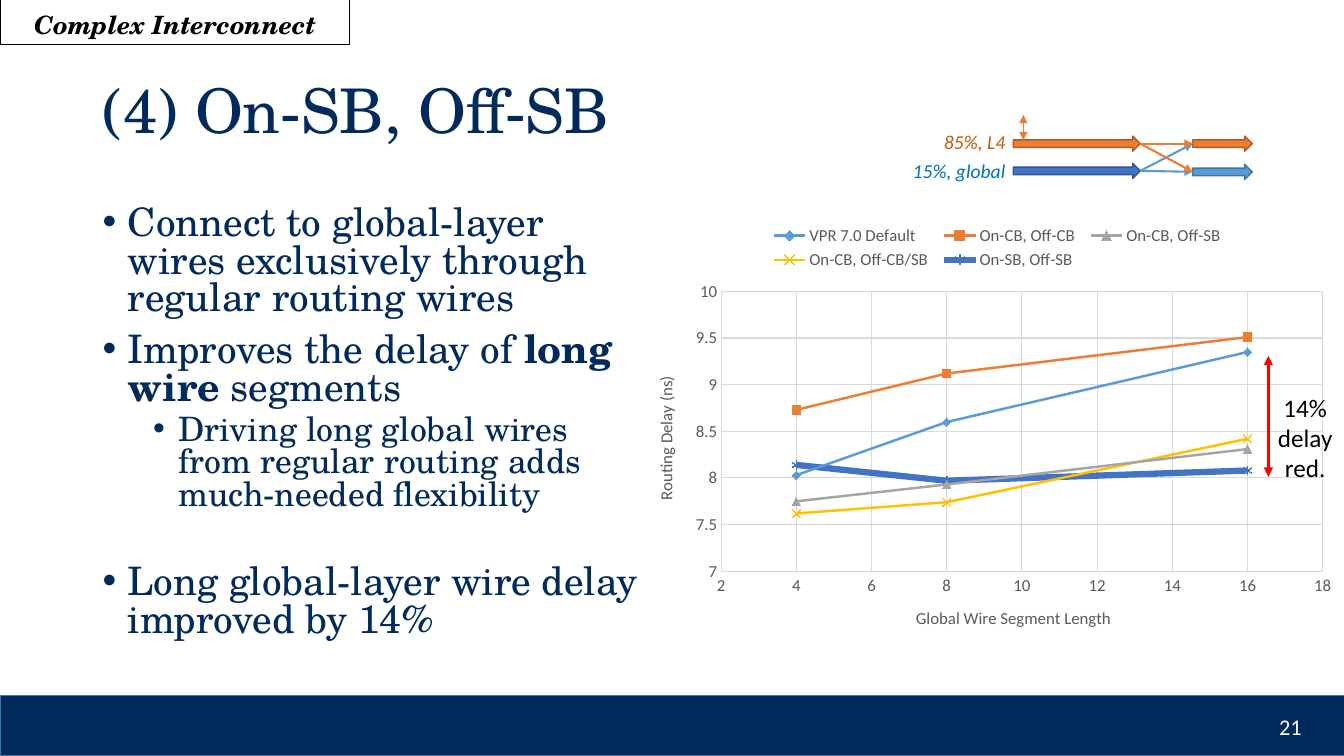
from dataclasses import dataclass

from lxml import etree
from pptx import Presentation
from pptx.chart.data import XyChartData
from pptx.dml.color import RGBColor
from pptx.enum.chart import XL_CHART_TYPE as ChartType, XL_LEGEND_POSITION as LegendPos
from pptx.enum.chart import XL_MARKER_STYLE as Marker, XL_TICK_MARK as TickMark
from pptx.enum.shapes import MSO_CONNECTOR as Connector, MSO_SHAPE as Shape
from pptx.enum.text import MSO_ANCHOR as Anchor, PP_ALIGN as Align
from pptx.oxml.ns import qn
from pptx.util import Inches, Pt

COLORS = {
    "navy": "002A5C", "white": "FFFFFF", "black": "000000", "red": "FF0000",
    "orange": "ED7D31", "orange_edge": "AF5C24", "orange_text": "C55A11",
    "blue": "4472C4", "blue_edge": "325491", "blue_text": "0070C0",
    "sky": "5B9BD5", "sky_edge": "43739E",
    "gray": "A5A5A5", "gold": "FFC000", "grid": "D9D9D9", "axis_text": "595959",
}
SERIF, SANS = "TeX Gyre Schola", "Calibri"
TOP, LEFT, BOTTOM, RIGHT = range(4)


@dataclass
class Label:
    lines: list
    box: tuple
    size: float
    color: str
    font: str = SANS
    align: Align = Align.LEFT
    anchor: Anchor = Anchor.TOP
    bold: bool = False
    italic: bool = False
    spacing: float = 1.0


@dataclass
class Bullet:
    runs: list  # (text, bold)
    size: float
    indent: float
    space_before: float


@dataclass
class Wire:
    box: tuple
    fill: str
    edge: str


@dataclass
class Curve:
    name: str
    delays: tuple
    color: str
    marker: Marker
    width: float = 1.75
    filled: bool = True


def rgb(name: str) -> RGBColor:
    return RGBColor.from_string(COLORS[name])


def style_font(font, color: str, **values) -> None:
    for attribute, value in values.items():
        setattr(font, attribute, value)
    font.color.rgb = rgb(color)


def style_line(line, color: str, width: float) -> None:
    line.color.rgb = rgb(color)
    line.width = Pt(width)


def add_box(slide, kind: Shape, box: tuple, fill: str | None, edge: str):
    shape = slide.shapes.add_shape(kind, *map(Inches, box))
    shape.shadow.inherit = False
    if fill:
        shape.fill.solid()
        shape.fill.fore_color.rgb = rgb(fill)
    else:
        shape.fill.background()
    style_line(shape.line, edge, 1)
    return shape


def add_label(slide, label: Label) -> None:
    frame = slide.shapes.add_textbox(*map(Inches, label.box)).text_frame
    frame.word_wrap = True
    frame.vertical_anchor = label.anchor
    for i, line in enumerate(label.lines):
        paragraph = frame.paragraphs[0] if i == 0 else frame.add_paragraph()
        paragraph.alignment = label.align
        paragraph.line_spacing = label.spacing
        run = paragraph.add_run()
        run.text = line
        style_font(run.font, label.color, size=Pt(label.size), name=label.font,
                   bold=label.bold, italic=label.italic)


def add_bullets(slide, bullets: list, box: tuple) -> None:
    frame = slide.shapes.add_textbox(*map(Inches, box)).text_frame
    frame.word_wrap = True
    for i, bullet in enumerate(bullets):
        paragraph = frame.paragraphs[0] if i == 0 else frame.add_paragraph()
        paragraph.line_spacing = 0.8
        paragraph.space_before = Pt(bullet.space_before)
        props = paragraph._p.get_or_add_pPr()
        props.set("marL", str(Inches(bullet.indent)))
        props.set("indent", str(Inches(-0.25)))
        etree.SubElement(props, qn("a:buFont")).set("typeface", "Arial")
        etree.SubElement(props, qn("a:buChar")).set("char", "•")
        for text, bold in bullet.runs:
            run = paragraph.add_run()
            run.text = text
            style_font(run.font, "navy", size=Pt(bullet.size), name=SERIF, bold=bold)


def add_arrow(slide, start: tuple, end: tuple, color: str, width: float,
              both_ends: bool = False):
    arrow = slide.shapes.add_connector(Connector.STRAIGHT, *map(Inches, start + end))
    style_line(arrow.line, color, width)
    line = arrow.line._get_or_add_ln()
    for tag in ["a:headEnd"] * both_ends + ["a:tailEnd"]:
        etree.SubElement(line, qn(tag)).set("type", "triangle")
    etree.SubElement(arrow._element.spPr, qn("a:effectLst"))
    return arrow


def make_layout(inner: bool, **place: float):
    layout = etree.Element(qn("c:layout"))
    manual = etree.SubElement(layout, qn("c:manualLayout"))
    values = {"layoutTarget": "inner"} if inner else {}
    values |= {"xMode": "edge", "yMode": "edge"} | place
    for tag, value in values.items():
        etree.SubElement(manual, qn(f"c:{tag}")).set("val", str(value))
    return layout


def style_axis(axis, title: str, low: float, high: float, step: float) -> None:
    values = {"minimum_scale": low, "maximum_scale": high, "major_unit": step,
              "major_tick_mark": TickMark.NONE, "minor_tick_mark": TickMark.NONE,
              "has_major_gridlines": True}
    for attribute, value in values.items():
        setattr(axis, attribute, value)
    style_line(axis.format.line, "grid", 0.75)
    style_line(axis.major_gridlines.format.line, "grid", 0.75)
    axis.tick_labels.number_format = "General"
    axis.tick_labels.number_format_is_linked = False
    axis.axis_title.text_frame.text = title
    title_font = axis.axis_title.text_frame.paragraphs[0].runs[0].font
    for font in (axis.tick_labels.font, title_font):
        style_font(font, "axis_text", size=Pt(12), name=SANS, bold=False)


def add_delay_chart(slide, curves: list, lengths: tuple, box: tuple) -> None:
    data = XyChartData()
    for curve in curves:
        points = data.add_series(curve.name)
        for length, delay in zip(lengths, curve.delays):
            points.add_data_point(length, delay)
    chart = slide.shapes.add_chart(ChartType.XY_SCATTER_LINES, *map(Inches, box), data).chart
    style_font(chart.font, "black", size=Pt(10), name=SANS)
    chart.has_title = False
    chart.plots[0].vary_by_categories = False
    style_axis(chart.category_axis, "Global Wire Segment Length", 2, 18, 2)
    style_axis(chart.value_axis, "Routing Delay (ns)", 7, 10, 0.5)
    for curve, series in zip(curves, chart.plots[0].series):
        series.smooth = False
        style_line(series.format.line, curve.color, curve.width)
        series.marker.style = curve.marker
        series.marker.size = 6
        marker = series.marker.format
        style_line(marker.line, curve.color, 0.75)
        if curve.filled:
            marker.fill.solid()
            marker.fill.fore_color.rgb = rgb(curve.color)
        else:
            marker.fill.background()

    # Legend and plot area placement
    chart.has_legend = True
    legend = chart.legend
    legend.position = LegendPos.TOP
    legend.include_in_layout = False
    style_font(legend.font, "axis_text", size=Pt(12), name=SANS)
    plot_area = chart._chartSpace.chart.plotArea
    for parent in (plot_area, legend._element):
        for old in parent.findall(qn("c:layout")):
            parent.remove(old)
    plot_area.insert(0, make_layout(True, x=0.12, y=0.18, w=0.85, h=0.64))
    legend._element.find(qn("c:legendPos")).addnext(
        make_layout(False, x=0.18, y=0.02, w=0.66, h=0.12))


LABELS = [
    Label(["(4) On-SB, Off-SB"], (0.92, 0.4, 11.5, 1.45), 44, "navy", SERIF,
          anchor=Anchor.MIDDLE, spacing=0.9),
    Label(["21"], (10.01, 7.01, 3, 0.4), 16, "white", align=Align.RIGHT, anchor=Anchor.MIDDLE),
    Label(["Complex Interconnect"], (0.24, 0.04, 4.05, 0.4), 18, "black", SERIF,
          bold=True, italic=True),
    Label(["85%, L4"], (8.55, 1.24, 1.52, 0.34), 14, "orange_text", align=Align.RIGHT, italic=True),
    Label(["15%, global"], (8.55, 1.53, 1.52, 0.34), 14, "blue_text", align=Align.RIGHT,
          italic=True),
    Label(["14%", "delay", "red."], (12.52, 3.84, 0.85, 1.01), 18, "black", align=Align.CENTER),
]
BULLETS = [
    Bullet([("Connect to global-layer wires exclusively through regular routing wires", False)],
           28, 0.25, 0),
    Bullet([("Improves the delay of ", False), ("long wire", True), (" segments", False)],
           28, 0.25, 10),
    Bullet([("Driving long global wires from regular routing adds much-needed flexibility", False)],
           24, 0.75, 5),
    Bullet([("Long global-layer wire delay improved by 14%", False)], 28, 0.25, 38),
]
WIRES = {
    "regular_in": Wire((10.05, 1.35, 1.26, 0.15), "orange", "orange_edge"),
    "regular_out": Wire((11.83, 1.35, 0.59, 0.15), "orange", "orange_edge"),
    "global_in": Wire((10.05, 1.62, 1.26, 0.15), "blue", "blue_edge"),
    "global_out": Wire((11.83, 1.63, 0.59, 0.15), "sky", "sky_edge"),
}
SWITCHES = [("global_in", "global_out", "sky"), ("global_in", "regular_out", "sky"),
            ("regular_in", "regular_out", "orange"), ("regular_in", "global_out", "orange")]
CURVES = [
    Curve("VPR 7.0 Default", (8.03, 8.6, 9.35), "sky", Marker.DIAMOND),
    Curve("On-CB, Off-CB", (8.73, 9.12, 9.51), "orange", Marker.SQUARE),
    Curve("On-CB, Off-SB", (7.75, 7.93, 8.31), "gray", Marker.TRIANGLE),
    Curve("On-CB, Off-CB/SB", (7.62, 7.74, 8.42), "gold", Marker.X, filled=False),
    Curve("On-SB, Off-SB", (8.14, 7.97, 8.08), "blue", Marker.STAR, 4.5, False),
]


def main() -> None:
    deck = Presentation()
    deck.slide_width, deck.slide_height = Inches(13.33), Inches(7.5)
    slide = deck.slides.add_slide(deck.slide_layouts[6])

    # Footer band, section tag, chart and text
    add_box(slide, Shape.RECTANGLE, (0, 6.9, 13.35, 0.6), "navy", "sky_edge")
    add_box(slide, Shape.RECTANGLE, (0, -0.01, 3.47, 0.45), None, "black")
    add_bullets(slide, BULLETS, (0.92, 2, 5.57, 4.76))
    add_delay_chart(slide, CURVES, (4, 8, 16), (6.31, 2.11, 7.02, 4.34))
    for label in LABELS:
        add_label(slide, label)

    # Wire diagram
    wires = {key: add_box(slide, Shape.RIGHT_ARROW, wire.box, wire.fill, wire.edge)
             for key, wire in WIRES.items()}
    for source, target, color in SWITCHES:
        switch = add_arrow(slide, (11.31, 1.42), (11.83, 1.7), color, 1.5)
        switch.begin_connect(wires[source], RIGHT)
        switch.end_connect(wires[target], LEFT)
    add_arrow(slide, (10.15, 1.14), (10.15, 1.39), "orange", 1, both_ends=True)

    # Delay reduction span
    add_arrow(slide, (12.58, 4.73), (12.58, 3.53), "red", 2.25, both_ends=True)
    deck.save("out.pptx")


if __name__ == "__main__":
    main()
